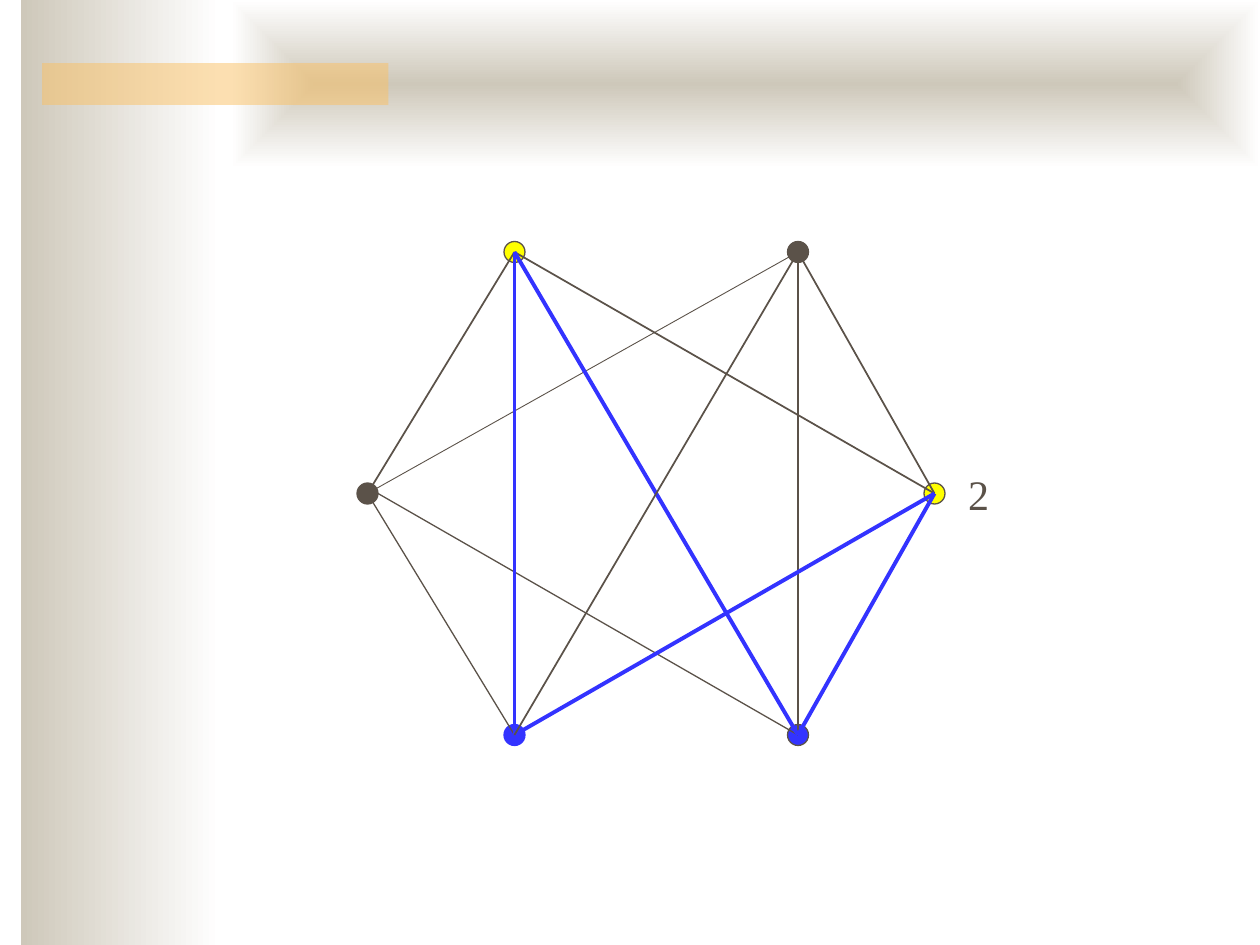
from dataclasses import dataclass

from lxml import etree
from pptx import Presentation
from pptx import util as u
from pptx.dml.color import RGBColor
from pptx.enum import shapes, text
from pptx.oxml import ns

SAND = RGBColor(0xCE, 0xC8, 0xBA)
WHITE = RGBColor(0xFF, 0xFF, 0xFF)
ORANGE = RGBColor(0xFA, 0xC1, 0x64)
BROWN = RGBColor(0x5B, 0x52, 0x49)
BLUE = RGBColor(0x33, 0x33, 0xFF)
YELLOW = RGBColor(0xFF, 0xFF, 0x00)

NODE_SIZE = 12


@dataclass(frozen=True)
class Node:
    x: float  # centre, in points
    y: float
    fill: RGBColor
    outline: RGBColor = BROWN


@dataclass(frozen=True)
class Edge:
    start: Node
    end: Node
    weight: float = 1
    color: RGBColor = BROWN
    start_shift: float = 0


def add_block(slide, kind, left: float, top: float, width: float, height: float):
    """Add a preset shape without shadow or outline."""
    block = slide.shapes.add_shape(
        kind, u.Pt(left), u.Pt(top), u.Pt(width), u.Pt(height))
    block.shadow.inherit = False
    block.line.fill.background()
    return block


def fade_to_white(block) -> None:
    block.fill.gradient()
    block.fill.gradient_angle = 0
    for stop, color in zip(block.fill.gradient_stops, (SAND, WHITE)):
        stop.color.rgb = color


def fade_from_centre(block) -> None:
    """Turn the linear fade into one that runs from the centre to the sides."""
    linear = block.fill._xPr.find(".//" + ns.qn("a:lin"))
    gradient = linear.getparent()
    outward = etree.Element(ns.qn("a:path"), {"path": "shape"})
    etree.SubElement(outward, ns.qn("a:fillToRect"),
                     {side: "50000" for side in "ltrb"})
    gradient.replace(linear, outward)


def draw_node(slide, node: Node) -> None:
    dot = add_block(slide, shapes.MSO_SHAPE.OVAL, node.x - NODE_SIZE / 2,
                    node.y - NODE_SIZE / 2, NODE_SIZE, NODE_SIZE)
    dot.fill.solid()
    dot.fill.fore_color.rgb = node.fill
    dot.line.color.rgb = node.outline
    dot.line.width = u.Pt(0.75)


def draw_edge(slide, edge: Edge) -> None:
    line = slide.shapes.add_connector(
        shapes.MSO_CONNECTOR.STRAIGHT,
        u.Pt(edge.start.x + edge.start_shift), u.Pt(edge.start.y),
        u.Pt(edge.end.x), u.Pt(edge.end.y))
    line.line.color.rgb = edge.color
    line.line.width = u.Pt(edge.weight)
    etree.SubElement(line._element.spPr, ns.qn("a:effectLst"))


def draw_background(slide) -> None:
    rectangle = shapes.MSO_SHAPE.RECTANGLE
    side_band = add_block(slide, rectangle, 12, 0, 114, 540)
    fade_to_white(side_band)
    title_band = add_block(slide, rectangle, 132, 0, 588, 96)
    fade_to_white(title_band)
    fade_from_centre(title_band)
    accent = add_block(slide, rectangle, 24, 36, 198, 24)
    accent.fill.solid()
    accent.fill.fore_color.rgb = ORANGE
    tint = accent._element.spPr.find(".//" + ns.qn("a:srgbClr"))
    etree.SubElement(tint, ns.qn("a:alpha"), {"val": "50000"})


def draw_label(slide, label: str) -> None:
    box = slide.shapes.add_textbox(u.Pt(546), u.Pt(264), u.Pt(26.5), u.Pt(36))
    frame = box.text_frame
    frame.word_wrap = False
    frame.auto_size = text.MSO_AUTO_SIZE.SHAPE_TO_FIT_TEXT
    paragraph = frame.paragraphs[0]
    paragraph.text = label
    paragraph.alignment = text.PP_ALIGN.CENTER
    paragraph.font.name = "Times New Roman"
    paragraph.font.size = u.Pt(24)
    paragraph.font.color.rgb = BROWN


def main() -> None:
    prs = Presentation()
    prs.slide_width, prs.slide_height = u.Pt(720), u.Pt(540)
    slide = prs.slides.add_slide(prs.slide_layouts[6])
    draw_background(slide)

    # Graph: six nodes on a hexagon
    top_left = Node(294, 144, YELLOW)
    top_right = Node(456, 144, BROWN)
    left = Node(210, 282, BROWN)
    right = Node(534, 282, YELLOW)
    bottom_left = Node(294, 420, BLUE, BLUE)
    bottom_right = Node(456, 420, BLUE)
    for node in (bottom_right, bottom_left, right, left, top_right, top_left):
        draw_node(slide, node)

    # Edges, with those between yellow and blue nodes highlighted
    edges = (
        Edge(left, top_left),
        Edge(left, top_right, 0.5),
        Edge(left, bottom_right, 0.75, start_shift=NODE_SIZE / 2),
        Edge(left, bottom_left, 0.75),
        Edge(top_right, right),
        Edge(top_right, bottom_right),
        Edge(top_left, bottom_left, 2.25, BLUE),
        Edge(right, bottom_right, 2.25, BLUE),
        Edge(top_left, right),
        Edge(bottom_left, right, 2.25, BLUE),
        Edge(top_left, bottom_right, 2.25, BLUE),
        Edge(bottom_left, top_right),
    )
    for edge in edges:
        draw_edge(slide, edge)

    draw_label(slide, "2")
    prs.save("out.pptx")


if __name__ == "__main__":
    main()
